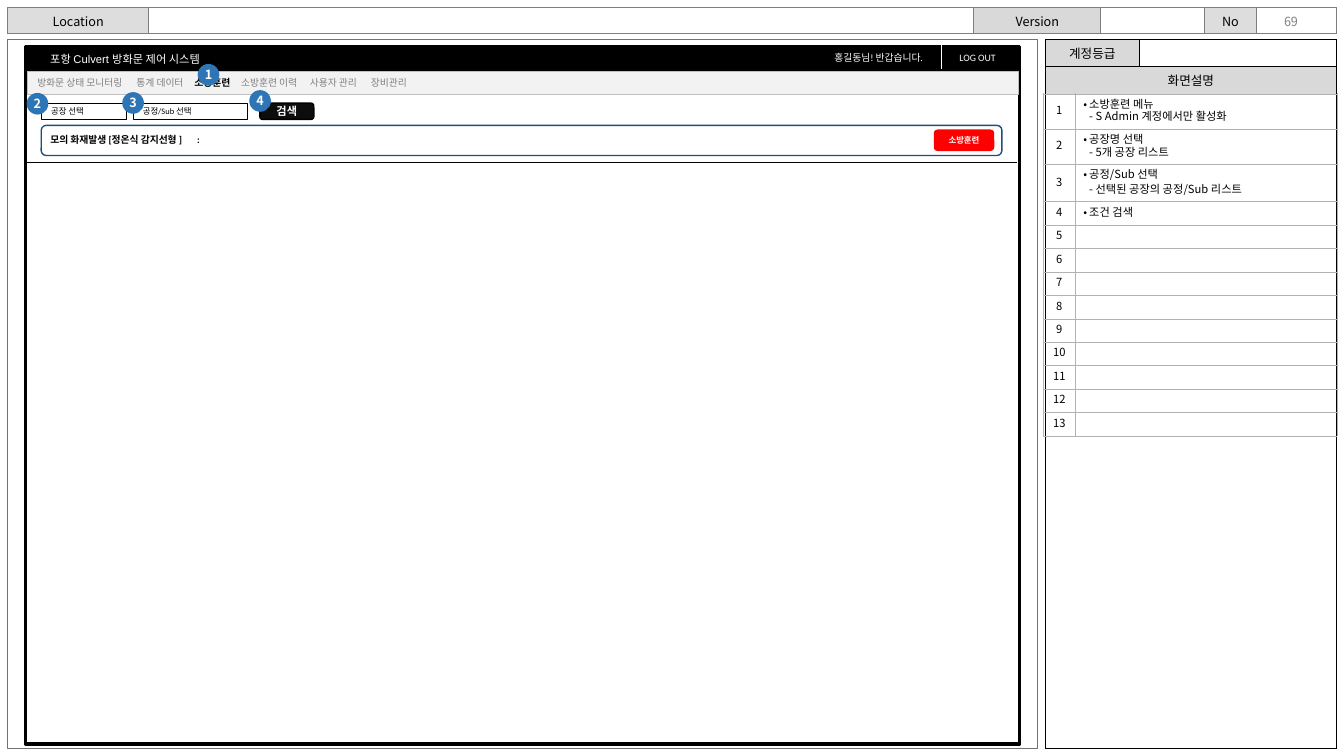
"""Build the fire drill screen specification slide."""
import lxml.etree
import pptx
import pptx.dml.color
import pptx.enum.shapes
import pptx.enum.text
import pptx.oxml.ns
import pptx.util

Cm = pptx.util.Cm
Pt = pptx.util.Pt
qn = pptx.oxml.ns.qn
ALIGN = pptx.enum.text.PP_ALIGN
MIDDLE = pptx.enum.text.MSO_ANCHOR.MIDDLE
SHAPE = pptx.enum.shapes.MSO_SHAPE
NOTO = "Noto Sans CJK KR"
COLORS = {
    "black": "000000", "white": "FFFFFF", "ink": "0D0D0D", "red": "FF0000",
    "blue": "2E75B6", "navy": "1F4E79", "label": "D9D9D9", "light": "DDDDDD",
    "menu": "F2F2F2", "menu_edge": "BFBFBF", "grid": "B2B2B2",
    "gray": "7F7F7F", "frame": "767171", "inactive": "808080",
}
RGB = {name: pptx.dml.color.RGBColor.from_string(value) for name, value in COLORS.items()}


def format_text(paragraph, size, color="black", font=NOTO, bold=False, align=ALIGN.CENTER):
    paragraph.alignment = align
    for span in paragraph.runs:
        span.font.size = Pt(size)
        span.font.bold = bold
        span.font.name = font
        span.font.color.rgb = RGB[color]
        east_asian = lxml.etree.Element(qn("a:ea"), typeface=NOTO)
        span.font._element.find(qn("a:latin")).addnext(east_asian)
    if not paragraph.runs:
        lxml.etree.SubElement(paragraph._p, qn("a:endParaRPr"), sz=str(size * 100))


def add_grid(left, top, widths, heights, edge, edge_width):
    frame = slide.shapes.add_table(len(heights), len(widths), Cm(left), Cm(top),
                                   Cm(sum(widths)), Cm(sum(heights)))
    table = frame.table
    table.first_row = table.horz_banding = False
    for column, width in zip(table.columns, widths):
        column.width = Cm(width)
    for row, height in zip(table.rows, heights):
        row.height = Cm(height)
    for cell in table.iter_cells():
        cell.fill.background()
        cell.vertical_anchor = MIDDLE
        cell.margin_left = cell.margin_right = Cm(0.1)
        cell.margin_top = cell.margin_bottom = Cm(0)
        properties = cell._tc.get_or_add_tcPr()
        for position, side in enumerate(("lnL", "lnR", "lnT", "lnB")):
            border = lxml.etree.Element(qn(f"a:{side}"), w=str(Pt(edge_width)))
            fill = lxml.etree.SubElement(border, qn("a:solidFill"))
            lxml.etree.SubElement(fill, qn("a:srgbClr"), val=COLORS[edge])
            properties.insert(position, border)
    return table


deck = pptx.Presentation()
deck.slide_width = Cm(33.87)
deck.slide_height = Cm(19.05)
slide = deck.slides.add_slide(deck.slide_layouts[5])

header = add_grid(0.2, 0.2, [3.54, 20.8, 3.2, 2.62, 1.3, 2.02], [0.64], "gray", 0.75)
header_cells = [("Location", "light"), ("", "white"), ("Version", "label"),
                ("", "white"), ("No", "light"), ("", None)]
panel = add_grid(26.34, 0.99, [2.37, 4.97], [0.69, 0.69, 16.48], "black", 0.25)
for row in (1, 2):
    panel.cell(row, 0).merge(panel.cell(row, 1))
panel_cells = [("계정등급", "label"), ("", None), ("화면설명", "label")] + [("", None)] * 3
for table, contents in [(header, header_cells), (panel, panel_cells)]:
    for cell, (text, fill) in zip(table.iter_cells(), contents):
        cell.text = text
        format_text(cell.text_frame.paragraphs[0], 9)
        if fill:
            cell.fill.solid()
            cell.fill.fore_color.rgb = RGB[fill]

boxes = [
    ("frame", SHAPE.RECTANGLE, 0.2, 0.99, 25.96, 17.88, None, "frame", 0.75),
    ("alarm", SHAPE.ROUNDED_RECTANGLE, 1.04, 3.16, 24.21, 0.76, None, "navy", 1),
    ("screen", SHAPE.RECTANGLE, 0.64, 1.17, 25.06, 17.58, None, "black", 2.25),
    ("bar", SHAPE.RECTANGLE, 0.64, 1.17, 24.99, 0.64, "black", "black", 0.25),
    ("page number", None, 31.39, 0.13, 2.29, 0.81, None, None, 0),
    ("greeting", None, 20.78, 1.17, 3.1, 0.56, None, None, 0),
    ("logout", None, 23.93, 1.18, 1.57, 0.56, None, None, 0),
    ("menu", SHAPE.RECTANGLE, 0.69, 1.8, 24.97, 0.58, "menu", "menu_edge", 0.25),
    ("search", SHAPE.ROUNDED_RECTANGLE, 6.55, 2.6, 1.36, 0.41, "ink", "black", 1),
    ("plant", SHAPE.RECTANGLE, 1.04, 2.6, 2.15, 0.41, "white", "black", 0.5),
    ("process", SHAPE.RECTANGLE, 3.35, 2.6, 2.89, 0.41, "white", "black", 0.5),
    ("alarm label", None, 1.02, 3.25, 4.8, 0.56, None, None, 0),
    ("drill", SHAPE.ROUNDED_RECTANGLE, 23.55, 3.28, 1.49, 0.51, "red", "red", 1),
]
badges = [(5, 1.63), (0.69, 2.36), (3.1, 2.34), (6.3, 2.29)]
for number, (left, top) in enumerate(badges, 1):
    boxes.append((str(number), SHAPE.OVAL, left, top, 0.51, 0.51, "blue", "blue", 1))

labels = {
    "page number": ("69", 9, "gray"),
    "greeting": ("홍길동님! 반갑습니다.", 7, "white", "Calibri", False, ALIGN.LEFT),
    "logout": ("LOG OUT", 7, "white", "Calibri", False, ALIGN.LEFT),
    "search": ("검색", 8, "white", "Calibri", True),
    "plant": ("공장 선택", 6, "black", "Calibri", False, ALIGN.LEFT),
    "process": ("공정/Sub 선택", 6, "black", "Calibri", False, ALIGN.LEFT),
    "alarm label": ("모의 화재발생 [정온식 감지선형 ]\t:", 7, "black", "Calibri", True, ALIGN.LEFT),
    "drill": ("소방훈련", 6, "white", "Calibri", True),
    "menu": ("", 7),
}
tab_stops = {"menu": [2.5, 3.96, 5.14, 6.87, 8.41], "alarm label": [3.7]}
menu_items = ["방화문 상태 모니터링", "통계 데이터", "소방훈련",
              "소방훈련 이력", "사용자 관리", "장비관리"]

for name, kind, left, top, width, height, fill, edge, edge_width in boxes:
    place = [Cm(left), Cm(top), Cm(width), Cm(height)]
    if kind is None:
        box = slide.shapes.add_textbox(*place)
    else:
        box = slide.shapes.add_shape(kind, *place)
        box.shadow.inherit = False
        box.fill.background()
        box.line.color.rgb = RGB[edge]
        box.line.width = Pt(edge_width)
    if fill:
        box.fill.solid()
        box.fill.fore_color.rgb = RGB[fill]
    if name.isdigit():
        labels[name] = (name, 9, "white", NOTO, True)
        box.text_frame.margin_left = box.text_frame.margin_right = Cm(0)
    if name not in labels:
        continue
    text, *style = labels[name]
    box.text_frame.word_wrap = True
    box.text_frame.vertical_anchor = MIDDLE
    box.text_frame.margin_top = box.text_frame.margin_bottom = Cm(0)
    para = box.text_frame.paragraphs[0]
    if name in tab_stops:
        tabs = lxml.etree.SubElement(para._p.get_or_add_pPr(), qn("a:tabLst"))
        for stop in tab_stops[name]:
            lxml.etree.SubElement(tabs, qn("a:tab"), pos=str(Cm(stop)), algn="l")
    if name == "menu":
        for index, item in enumerate(menu_items):
            span = para.add_run()
            span.text = f"\t{item}" if index else item
        format_text(para, 7, "inactive", align=ALIGN.LEFT)
        active = para.runs[menu_items.index("소방훈련")]
        active.font.bold = True
        active.font.color.rgb = RGB["black"]
    else:
        para.text = text
        format_text(para, *style)

title = slide.shapes.title
slide.shapes.element.append(title.element)
title.left, title.top, title.width, title.height = Cm(0.82), Cm(1.19), Cm(4.67), Cm(0.61)
title.text_frame.text = "포항 Culvert 방화문 제어 시스템"
title.text_frame.auto_size = pptx.enum.text.MSO_AUTO_SIZE.NONE
title.text_frame.vertical_anchor = MIDDLE
title.text_frame.margin_top = title.text_frame.margin_bottom = Cm(0)
format_text(title.text_frame.paragraphs[0], 8, "white", "Arial")

dividers = [(23.72, 1.12, 23.72, 1.75, "white"), (0.69, 4.09, 25.63, 4.09, "black")]
for *ends, color in dividers:
    line = slide.shapes.add_connector(pptx.enum.shapes.MSO_CONNECTOR.STRAIGHT,
                                      *[Cm(end) for end in ends])
    line.line.color.rgb = RGB[color]
    line.line.width = Pt(0.5)
    lxml.etree.SubElement(line._element.spPr, qn("a:effectLst"))

descriptions = [
    ["소방훈련 메뉴", "- S Admin 계정에서만 활성화"],
    ["공장명 선택", "- 5개 공장 리스트"],
    ["공정/Sub 선택", "- 선택된 공장의 공정/Sub 리스트"],
    ["조건 검색"],
]
descriptions += [[""]] * 9
guide = add_grid(26.29, 2.36, [0.81, 6.6], [0.89, 0.89, 0.94] + [0.59] * 10, "grid", 0.25)
for row, lines in enumerate(descriptions):
    number_cell, text_cell = guide.cell(row, 0), guide.cell(row, 1)
    number_cell.text = str(row + 1)
    number_cell.text_frame.paragraphs[0].line_spacing = Pt(9)
    format_text(number_cell.text_frame.paragraphs[0], 8)
    text_cell.margin_left = text_cell.margin_right = Cm(0.2)
    text_cell.text = "\n".join(lines)
    for index, para in enumerate(text_cell.text_frame.paragraphs):
        para.line_spacing = Pt(9)
        if index and row == 2:
            para.space_before = Pt(1.6)
        properties = para._p.get_or_add_pPr()
        properties.set("marL", str(Cm(0.15)))
        if index == 0 and para.text:
            properties.set("indent", str(Cm(-0.15)))
            lxml.etree.SubElement(properties, qn("a:buFont"), typeface=NOTO)
            lxml.etree.SubElement(properties, qn("a:buChar"), char="•")
        format_text(para, 8, align=ALIGN.LEFT)

deck.save("out.pptx")
